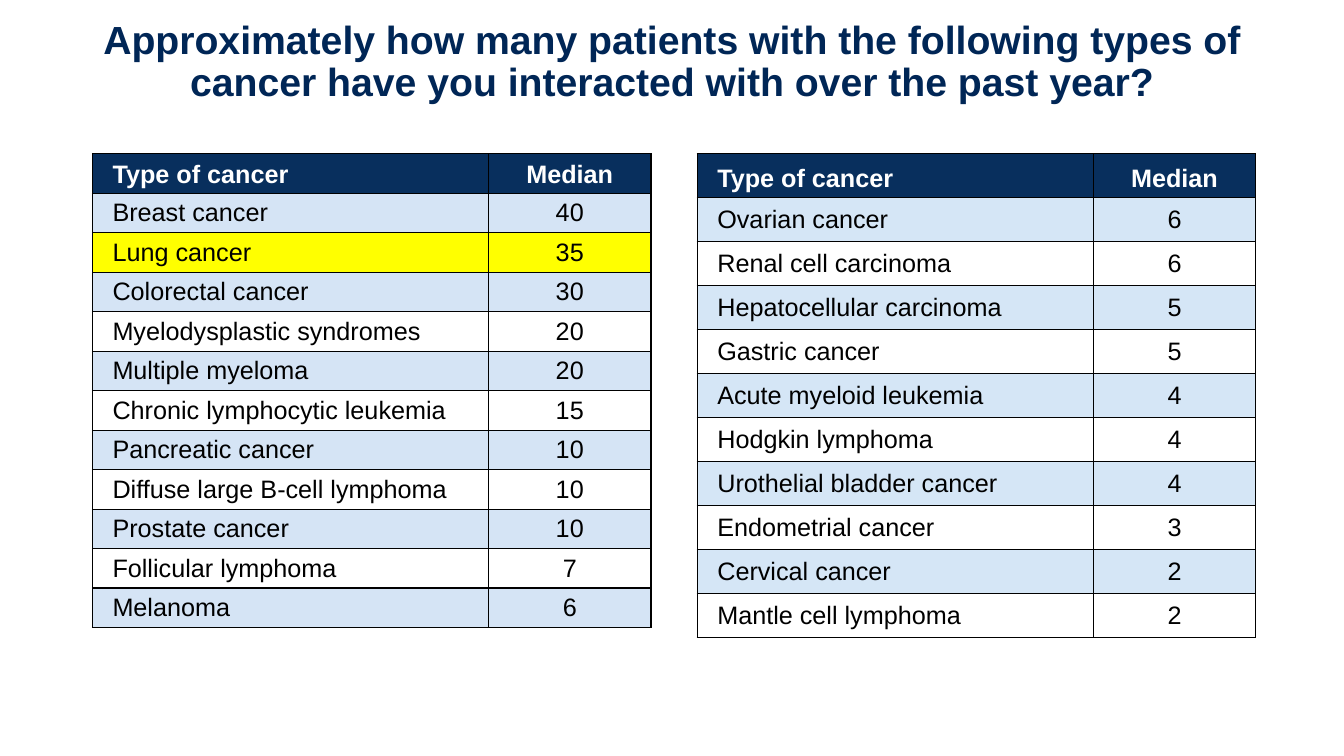
from lxml import etree
from pptx import Presentation
from pptx import util as u
from pptx.dml.color import RGBColor
from pptx.enum import text
from pptx.oxml.ns import qn

TITLE = ("Approximately how many patients with the following types of "
         "cancer have you interacted with over the past year?")
HEADER = ("Type of cancer", "Median")
COMMON = [
    ("Breast cancer", 40), ("Lung cancer", 35), ("Colorectal cancer", 30),
    ("Myelodysplastic syndromes", 20), ("Multiple myeloma", 20),
    ("Chronic lymphocytic leukemia", 15), ("Pancreatic cancer", 10),
    ("Diffuse large B-cell lymphoma", 10), ("Prostate cancer", 10),
    ("Follicular lymphoma", 7), ("Melanoma", 6),
]
LESS_COMMON = [
    ("Ovarian cancer", 6), ("Renal cell carcinoma", 6),
    ("Hepatocellular carcinoma", 5), ("Gastric cancer", 5),
    ("Acute myeloid leukemia", 4), ("Hodgkin lymphoma", 4),
    ("Urothelial bladder cancer", 4), ("Endometrial cancer", 3),
    ("Cervical cancer", 2), ("Mantle cell lymphoma", 2),
]


def rgb(value):
    return RGBColor.from_string(value)


class Deck:
    font = "Arial"
    navy, header_fill, highlight = "002656", "082F5D", "FFFF00"
    black, white = "000000", "FFFFFF"
    columns = (283, 116)

    def __init__(self, width, height):
        self.prs = Presentation()
        self.prs.slide_width, self.prs.slide_height = u.Pt(width), u.Pt(height)
        self.s = self.prs.slides.add_slide(self.prs.slide_layouts[6])

    def add_text(self, p, words, size, color, bold, centered):
        p.alignment = text.PP_ALIGN.CENTER if centered else text.PP_ALIGN.LEFT
        r = p.add_run()
        r.text = words
        r.font.name, r.font.size, r.font.bold = self.font, u.Pt(size), bold
        r.font.color.rgb = rgb(color)

    def title(self, words, x, y, w, h):
        tf = self.s.shapes.add_textbox(*map(u.Pt, (x, y, w, h))).text_frame
        tf.word_wrap = True
        tf.vertical_anchor = text.MSO_ANCHOR.MIDDLE
        p = tf.paragraphs[0]
        p.line_spacing = 0.9
        self.add_text(p, words, 28, self.navy, True, True)

    def borders(self, cell):
        """Draw a 1 pt line on all four sides, ahead of the cell's fill."""
        props = cell._tc.get_or_add_tcPr()
        for i, side in enumerate(("lnL", "lnR", "lnT", "lnB")):
            line = etree.Element(qn("a:" + side), w=str(u.Pt(1)))
            fill = etree.SubElement(line, qn("a:solidFill"))
            etree.SubElement(fill, qn("a:srgbClr"), val=self.black)
            props.insert(i, line)

    def cell(self, cell, words, fill, header, centered):
        cell.margin_left = cell.margin_right = u.Pt(14.4)
        cell.margin_top = cell.margin_bottom = u.Pt(3.3)
        anchor = text.MSO_ANCHOR
        cell.vertical_anchor = anchor.BOTTOM if header else anchor.MIDDLE
        cell.fill.solid()
        cell.fill.fore_color.rgb = rgb(fill)
        self.borders(cell)
        color = self.white if header else self.black
        p = cell.text_frame.paragraphs[0]
        self.add_text(p, words, 18, color, header, centered)

    def table(self, data, x, y, row_height, band, marked=None):
        rows = [HEADER] + data
        table = self.s.shapes.add_table(
            len(rows), len(HEADER), u.Pt(x), u.Pt(y),
            u.Pt(sum(self.columns)), u.Pt(row_height * len(rows))).table
        for column, width in zip(table.columns, self.columns):
            column.width = u.Pt(width)
        for i, row in enumerate(rows):
            table.rows[i].height = u.Pt(row_height)
            if i == 0:
                fill = self.header_fill
            elif row[0] == marked:
                fill = self.highlight
            else:
                fill = band if i % 2 else self.white
            for j, value in enumerate(row):
                self.cell(table.cell(i, j), str(value), fill, i == 0, j == 1)


def main():
    deck = Deck(960, 540)
    deck.title(TITLE, 66, 0, 828, 90)
    deck.table(COMMON, 66, 109.8, 27.38, "D5E4F5", marked="Lung cancer")
    deck.table(LESS_COMMON, 498, 109.8, 31.43, "D5E6F6")
    deck.prs.save("out.pptx")


if __name__ == "__main__":
    main()
